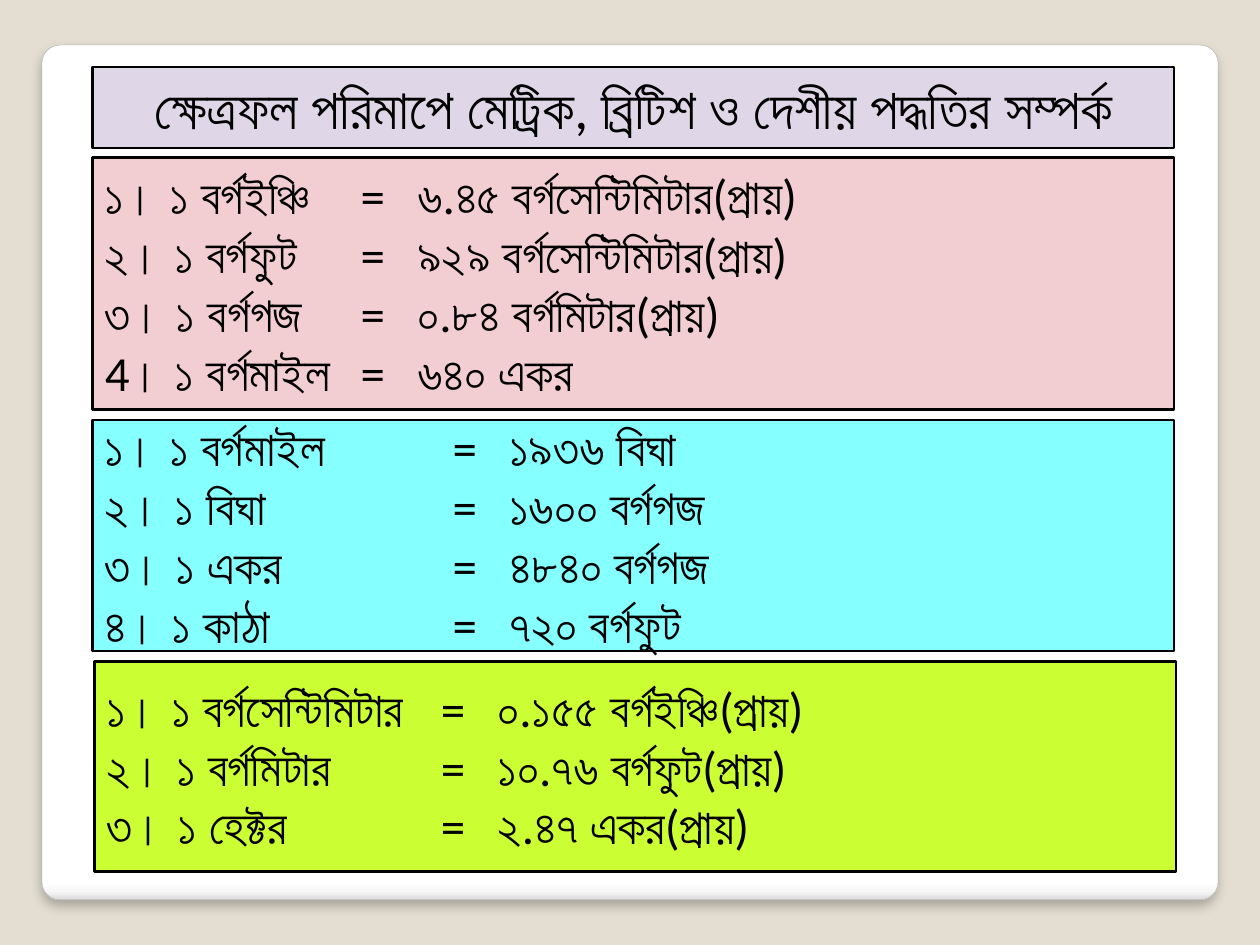
from lxml.etree import SubElement as Sub
from pptx import Presentation
from pptx.dml.color import RGBColor as Rgb
from pptx.enum.shapes import MSO_SHAPE as Kind
from pptx.enum.text import MSO_ANCHOR as Anchor, MSO_AUTO_SIZE as Fit, PP_ALIGN as Align
from pptx.oxml.ns import qn
from pptx.util import Inches, Pt

HUES = {
    "back": "E3DED1", "edge": "A4A4A4", "ink": "000000",
    "head": "DFD7E7", "rose": "F2CED2", "aqua": "85FFFF", "lime": "CCFF33",
}
FADE = [(0, "FFFFFF"), (98, "FFFFFF"), (99, "F7F7F7"), (100, "DADADA")]
TITLE = "ক্ষেত্রফল পরিমাপে মেট্রিক, ব্রিটিশ ও দেশীয় পদ্ধতির সম্পর্ক"
PANELS = [
    ("rose", (8.8, 15, 103, 24), 2.03, [
        ("১। ১ বর্গইঞ্চি", "৬.৪৫ বর্গসেন্টিমিটার(প্রায়)"),
        ("২। ১ বর্গফুট", "৯২৯ বর্গসেন্টিমিটার(প্রায়)"),
        ("৩। ১ বর্গগজ", "০.৮৪ বর্গমিটার(প্রায়)"),
        ("4। ১ বর্গমাইল", "৬৪০ একর")]),
    ("aqua", (8.8, 40, 103, 22), 2.76, [
        ("১। ১ বর্গমাইল", "১৯৩৬ বিঘা"),
        ("২। ১ বিঘা", "১৬০০ বর্গগজ"),
        ("৩। ১ একর", "৪৮৪০ বর্গগজ"),
        ("৪। ১ কাঠা", "৭২০ বর্গফুট")]),
    ("lime", (9, 63, 103, 20), 2.65, [
        ("১। ১ বর্গসেন্টিমিটার", "০.১৫৫ বর্গইঞ্চি(প্রায়)"),
        ("২। ১ বর্গমিটার", "১০.৭৬ বর্গফুট(প্রায়)"),
        ("৩। ১ হেক্টর", "২.৪৭ একর(প্রায়)")]),
]


class Board:
    """Draws styled boxes on a grid of 120 columns by 90 rows."""

    def __init__(self, deck, font="Calibri"):
        self.font = font
        self.col, self.row = deck.slide_width / 120, deck.slide_height / 90
        self.slide = deck.slides.add_slide(deck.slide_layouts[6])
        fill = self.slide.background.fill
        fill.solid()
        fill.fore_color.rgb = self.hue("back")

    def hue(self, name):
        return Rgb.from_string(HUES[name])

    def shape(self, kind, spot, edge, width):
        x, y, w, h = spot
        item = self.slide.shapes.add_shape(
            kind, round(x * self.col), round(y * self.row),
            round(w * self.col), round(h * self.row))
        item.shadow.inherit = False
        item.line.color.rgb = self.hue(edge)
        item.line.width = Pt(width)
        return item

    def card(self, spot):
        item = self.shape(Kind.ROUNDED_RECTANGLE, spot, "edge", 0.16)
        item.adjustments[0] = 0.021
        item.fill.gradient()
        item.fill.gradient_angle = 270
        props = item._element.spPr
        stops = props.find(".//" + qn("a:gsLst"))
        for stop in list(stops):
            stops.remove(stop)
        for at, tone in FADE:
            stop = Sub(stops, qn("a:gs"), pos=str(at * 1000))
            Sub(stop, qn("a:srgbClr"), val=tone)
        shade = Sub(props.find(qn("a:effectLst")), qn("a:outerShdw"),
                    blurRad=str(Pt(6)), dist=str(Pt(4)), dir="5400000",
                    algn="t", rotWithShape="0")
        tone = Sub(shade, qn("a:srgbClr"), val=HUES["ink"])
        Sub(tone, qn("a:alpha"), val="25000")

    def box(self, spot, fill, anchor):
        item = self.shape(Kind.RECTANGLE, spot, "ink", 1.5)
        item.fill.solid()
        item.fill.fore_color.rgb = self.hue(fill)
        frame = item.text_frame
        frame.word_wrap = True
        frame.vertical_anchor = anchor
        return frame

    def run(self, para, text, size):
        run = para.add_run()
        run.text = text
        run.font.name, run.font.size = self.font, Pt(size)
        run.font.color.rgb = self.hue("ink")

    def title(self, spot, text):
        frame = self.box(spot, "head", Anchor.TOP)
        frame.auto_size = Fit.SHAPE_TO_FIT_TEXT
        para = frame.paragraphs[0]
        para.alignment = Align.CENTER
        self.run(para, text, 32)

    def panel(self, fill, spot, stop, rows):
        frame = self.box(spot, fill, Anchor.MIDDLE)
        for i, (unit, value) in enumerate(rows):
            para = frame.add_paragraph() if i else frame.paragraphs[0]
            para.alignment = Align.LEFT
            tabs = Sub(para._p.get_or_add_pPr(), qn("a:tabLst"))
            for at in (stop, stop + 0.45):
                Sub(tabs, qn("a:tab"), pos=str(Inches(at)), algn="l")
            self.run(para, f"{unit}\t=\t{value}", 28)


def main():
    deck = Presentation()
    deck.slide_width, deck.slide_height = Inches(10), Inches(7.5)
    board = Board(deck)
    board.card((4, 4.3, 112, 81.4))
    board.title((8.8, 6.4, 103, 7.7), TITLE)
    for panel in PANELS:
        board.panel(*panel)
    deck.save("out.pptx")


if __name__ == "__main__":
    main()
